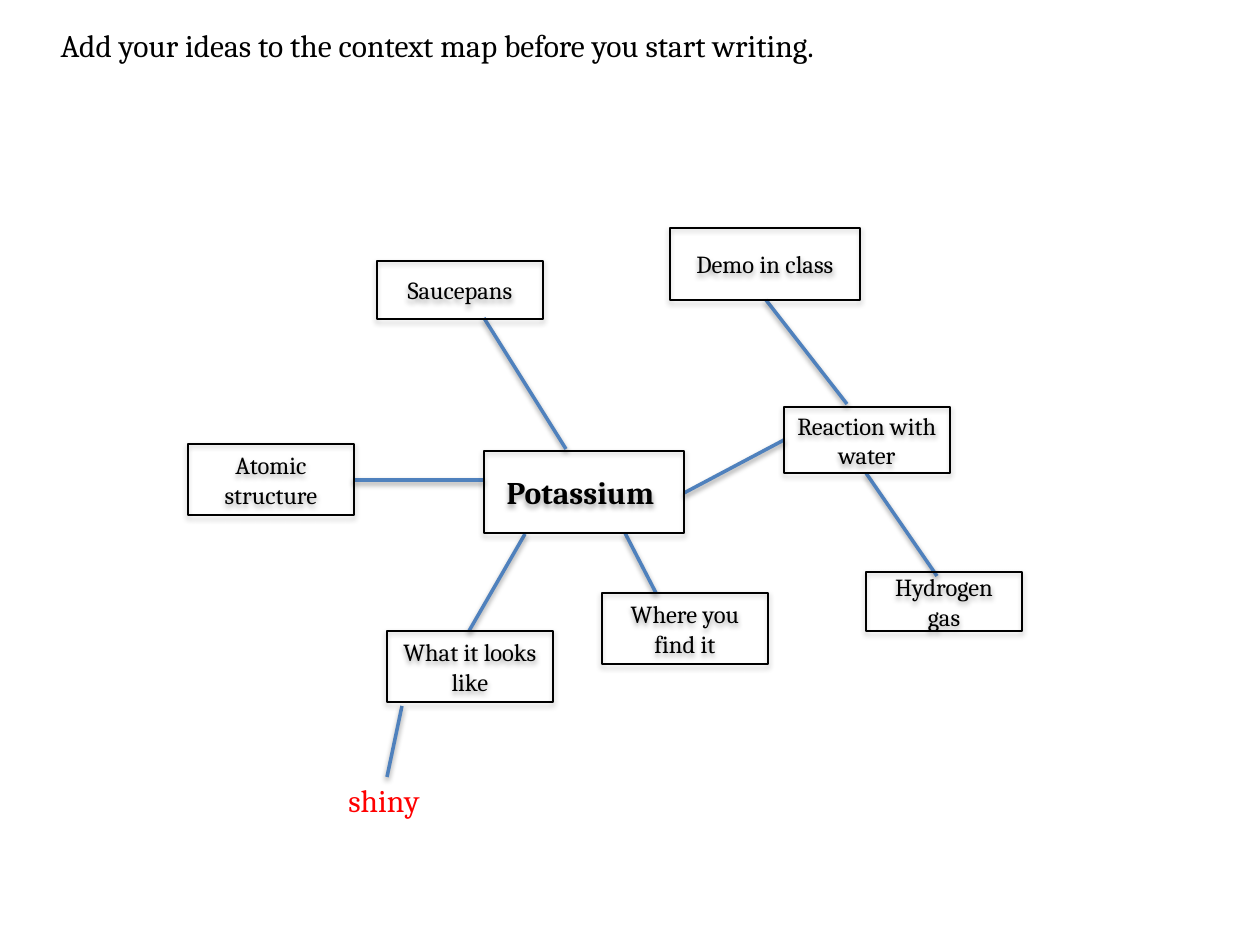
import pptx
import pptx.dml.color
import pptx.enum.shapes
import pptx.enum.text
import pptx.oxml
import pptx.oxml.ns
import pptx.util

PX = 914400 / 126
FONT = "Cambria"
BLACK, BLUE, RED = "000000", "4F81BD", "FF0000"
ALIGN = pptx.enum.text.PP_ALIGN
ANCHOR = pptx.enum.text.MSO_ANCHOR

# Idea boxes: text, then left, top, width, height inside the map
IDEAS = [
    ("What it looks like", 199, 403, 166, 71),
    ("Demo in class", 482, 0, 190, 72),
    ("Reaction with water", 596, 179, 166, 66),
    ("Saucepans", 189, 33, 166, 58),
    ("Atomic structure", 0, 216, 166, 71),
    ("Hydrogen gas", 678, 344, 156, 59),
    ("Where you find it", 414, 365, 166, 71),
]

# Links: start x, y and end x, y inside the map
LINKS = [
    (378, 221, 296, 90),    # Potassium - Saucepans
    (496, 265, 596, 212),   # Potassium - Reaction with water
    (214, 478, 199, 549),   # What it looks like - shiny
    (337, 306, 281, 403),   # Potassium - What it looks like
    (296, 252, 165, 252),   # Potassium - Atomic structure
    (659, 176, 578, 72),    # Reaction with water - Demo in class
    (749, 348, 678, 245),   # Hydrogen gas - Reaction with water
    (437, 305, 468, 365),   # Potassium - Where you find it
]


def emu(*lengths):
    return [round(length * PX) for length in lengths]


def color(value):
    return pptx.dml.color.RGBColor.from_string(value)


def write(shape, text, size=14, ink=BLACK, bold=False, align=ALIGN.LEFT,
          anchor=ANCHOR.TOP, fit=pptx.enum.text.MSO_AUTO_SIZE.NONE):
    frame = shape.text_frame
    frame.word_wrap = True
    frame.auto_size = fit
    frame.vertical_anchor = anchor
    para = frame.paragraphs[0]
    para.alignment = align
    span = para.add_run()
    span.text = text
    span.font.name = FONT
    span.font.size = pptx.util.Pt(size)
    span.font.bold = bold
    span.font.color.rgb = color(ink)


def add_shadow(shape, distance, opacity):
    """Soft black shadow straight below the shape."""
    properties = shape._element.spPr
    for effects in properties.findall(pptx.oxml.ns.qn("a:effectLst")):
        properties.remove(effects)
    properties.append(pptx.oxml.parse_xml(
        f'<a:effectLst {pptx.oxml.ns.nsdecls("a")}>'
        f'<a:outerShdw blurRad="40000" dist="{distance}" dir="5400000" rotWithShape="0">'
        f'<a:srgbClr val="{BLACK}"><a:alpha val="{opacity * 1000}"/></a:srgbClr>'
        '</a:outerShdw></a:effectLst>'))


def add_link(page, ends):
    link = page.shapes.add_connector(
        pptx.enum.shapes.MSO_CONNECTOR.STRAIGHT, *emu(*ends))
    link.line.color.rgb = color(BLUE)
    link.line.width = pptx.util.Pt(2)
    add_shadow(link, 20000, 38)


def add_idea(page, text, place, **style):
    box = page.shapes.add_shape(
        pptx.enum.shapes.MSO_SHAPE.RECTANGLE, *emu(*place))
    box.fill.background()
    box.line.color.rgb = color(BLACK)
    box.line.width = pptx.util.Pt(0.75)
    add_shadow(box, 23000, 35)
    write(box, text, align=ALIGN.CENTER, anchor=ANCHOR.MIDDLE, **style)


def add_heading(page, left, top, width, height):
    title = page.shapes.title
    title.left, title.top, title.width, title.height = emu(left, top, width, height)
    write(title, "Add your ideas to the context map before you start writing.", size=18)


def add_context_map(page, left, top):
    # Links lie behind the boxes
    for x1, y1, x2, y2 in LINKS:
        add_link(page, (left + x1, top + y1, left + x2, top + y2))

    # Central topic and its ideas
    add_idea(page, "Potassium ", (left + 296, top + 223, 200, 82), size=18, bold=True)
    for text, x, y, width, height in IDEAS:
        add_idea(page, text, (left + x, top + y, width, height))

    # Example answer
    answer = page.shapes.add_textbox(*emu(left + 148, top + 547, 147, 50))
    write(answer, "shiny", size=18, ink=RED,
          fit=pptx.enum.text.MSO_AUTO_SIZE.SHAPE_TO_FIT_TEXT)


def main():
    deck = pptx.Presentation()
    deck.slide_width, deck.slide_height = emu(1260, 945)
    page = deck.slides.add_slide(deck.slide_layouts.get_by_name("Title Only"))
    add_heading(page, 48, 20, 902, 50)
    add_context_map(page, 188, 228)
    deck.save("out.pptx")


if __name__ == "__main__":
    main()
